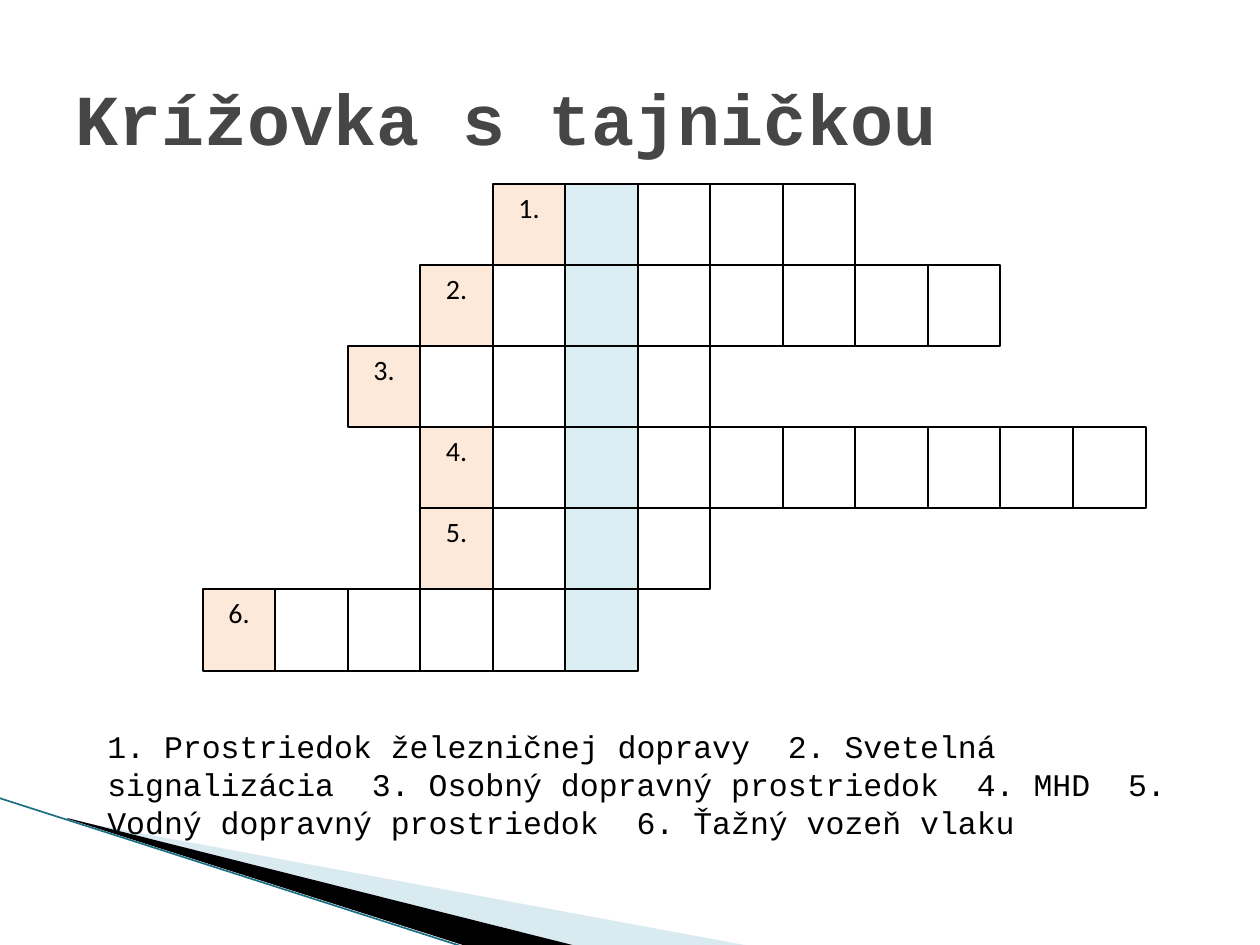
from dataclasses import dataclass

from lxml import etree
from pptx import Presentation
from pptx.dml.color import RGBColor
from pptx.enum.shapes import MSO_CONNECTOR, MSO_SHAPE
from pptx.enum.text import MSO_ANCHOR, PP_ALIGN
from pptx.oxml.ns import qn
from pptx.util import Pt

RECT = MSO_SHAPE.RECTANGLE
STRAIGHT = MSO_CONNECTOR.STRAIGHT
TOP, MIDDLE = MSO_ANCHOR.TOP, MSO_ANCHOR.MIDDLE
CENTER = PP_ALIGN.CENTER
PX = 914400 / 126

TITLE = "Krížovka s tajničkou"
CLUES = (
    "1. Prostriedok železničnej dopravy  2. Svetelná signalizácia  "
    "3. Osobný dopravný prostriedok  4. MHD  "
    "5. Vodný dopravný prostriedok  6. Ťažný vozeň vlaku"
)
WORDS = [(4, 5), (3, 8), (2, 5), (3, 10), (3, 4), (0, 6)]
SECRET_COL = 5
COLS = 13
GRID_LEFT, GRID_TOP, GRID_WIDTH, GRID_HEIGHT = 203, 184, 943, 487


@dataclass(frozen=True)
class Theme:
    ink: str = "000000"
    title: str = "464646"
    number_fill: str = "FDE9D9"
    secret_fill: str = "DAEEF3"
    cell_fill: str = "FFFFFF"
    wedge: str = "A0CBDC"
    edge: str = "1B6F85"
    mono: str = "Courier New"
    sans: str = "Calibri"
    title_size: int = 41
    clue_size: int = 18
    number_size: int = 16
    cell_line: float = 0.75
    edge_line: float = 0.95


def px(n):
    return round(n * PX)


class SlideBuilder:
    def __init__(self, slide, theme):
        self.shapes = slide.shapes
        self.theme = theme

    def fill(self, sp, color, alpha=None):
        sp.shadow.inherit = False
        sp.fill.solid()
        sp.fill.fore_color.rgb = RGBColor.from_string(color)
        if alpha is not None:
            clr = sp._element.spPr.find(qn("a:solidFill"))[0]
            etree.SubElement(clr, qn("a:alpha")).set("val", str(alpha * 1000))

    def set_text(self, tf, text, font, size, color, bold=False):
        tf.text = text
        f = tf.paragraphs[0].runs[0].font
        f.name, f.size, f.bold = font, Pt(size), bold
        f.color.rgb = RGBColor.from_string(color)

    def text(self, box, text, size, color, anchor=TOP, bold=False):
        tf = self.shapes.add_textbox(*map(px, box)).text_frame
        tf.word_wrap = True
        tf.vertical_anchor = anchor
        self.set_text(tf, text, self.theme.mono, size, color, bold)

    def polygon(self, points, color, alpha=None):
        fb = self.shapes.build_freeform(*points[0], scale=PX)
        fb.add_line_segments(points[1:], close=True)
        sp = fb.convert_to_shape()
        self.fill(sp, color, alpha)
        sp.line.fill.background()

    def line(self, start, end, color, width):
        cn = self.shapes.add_connector(STRAIGHT, *map(px, start + end))
        cn.line.color.rgb = RGBColor.from_string(color)
        cn.line.width = Pt(width)
        etree.SubElement(cn._element.spPr, qn("a:effectLst"))

    def cell(self, box, color, label=""):
        t = self.theme
        sp = self.shapes.add_shape(RECT, *map(px, box))
        self.fill(sp, color)
        sp.line.color.rgb = RGBColor.from_string(t.ink)
        sp.line.width = Pt(t.cell_line)
        if label:
            tf = sp.text_frame
            tf.vertical_anchor = TOP
            self.set_text(tf, label, t.sans, t.number_size, t.ink)
            p = tf.paragraphs[0]
            p.alignment = CENTER
            p.space_after = Pt(10)

    def crossword(self, words):
        t = self.theme
        xs = [GRID_LEFT + GRID_WIDTH * i // COLS for i in range(COLS + 1)]
        ys = [GRID_TOP + GRID_HEIGHT * i // len(words) for i in range(len(words) + 1)]
        for row, (start, count) in enumerate(words):
            for col in range(start, start + count):
                box = (xs[col], ys[row], xs[col + 1] - xs[col], ys[row + 1] - ys[row])
                if col == start:
                    self.cell(box, t.number_fill, f"{row + 1}.")
                else:
                    self.cell(box, t.secret_fill if col == SECRET_COL else t.cell_fill)


def main():
    prs = Presentation()
    prs.slide_width, prs.slide_height = px(1260), px(945)
    theme = Theme()
    s = SlideBuilder(prs.slides.add_slide(prs.slide_layouts[6]), theme)
    s.polygon([(69, 820), (750, 946), (575, 946), (69, 819)], theme.wedge, 40)
    s.polygon([(67, 818), (576, 946), (469, 947), (68, 819)], theme.ink)
    s.line((-1, 798), (467, 948), theme.edge, theme.edge_line)
    s.text((63, 38, 1134, 158), TITLE, theme.title_size, theme.title, MIDDLE, True)
    s.crossword(WORDS)
    s.text((95, 721, 1121, 127), CLUES, theme.clue_size, theme.ink)
    prs.save("out.pptx")


if __name__ == "__main__":
    main()
